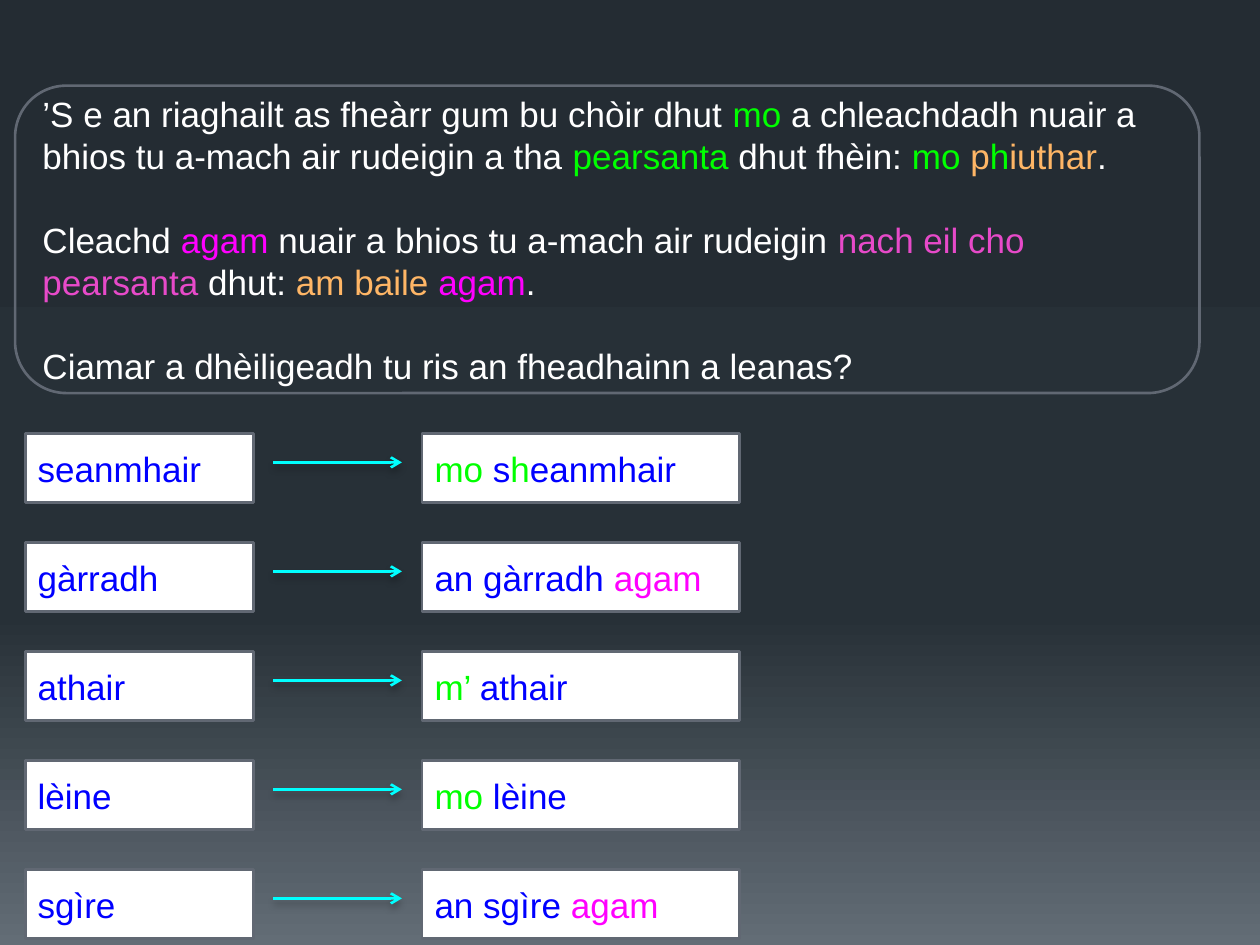
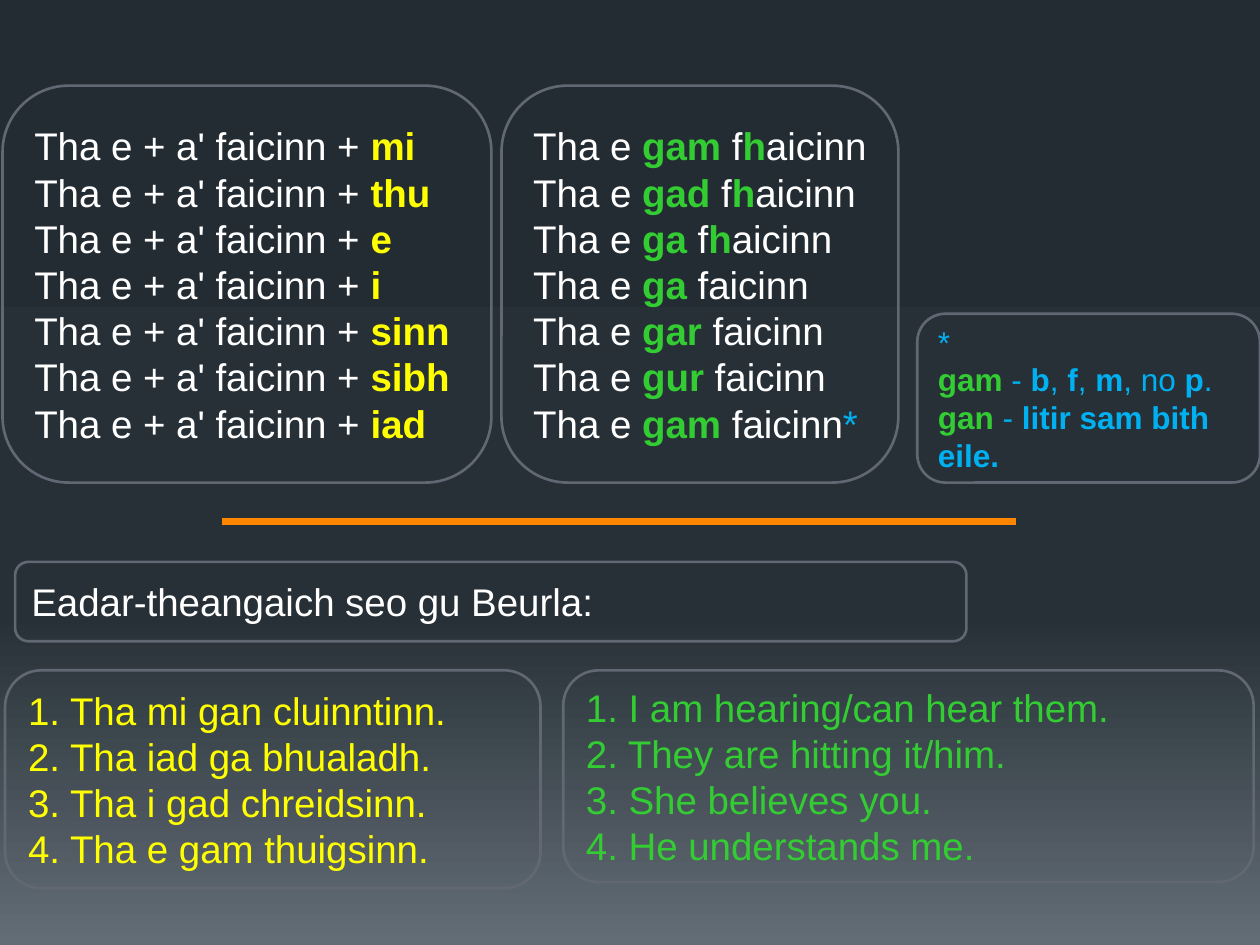
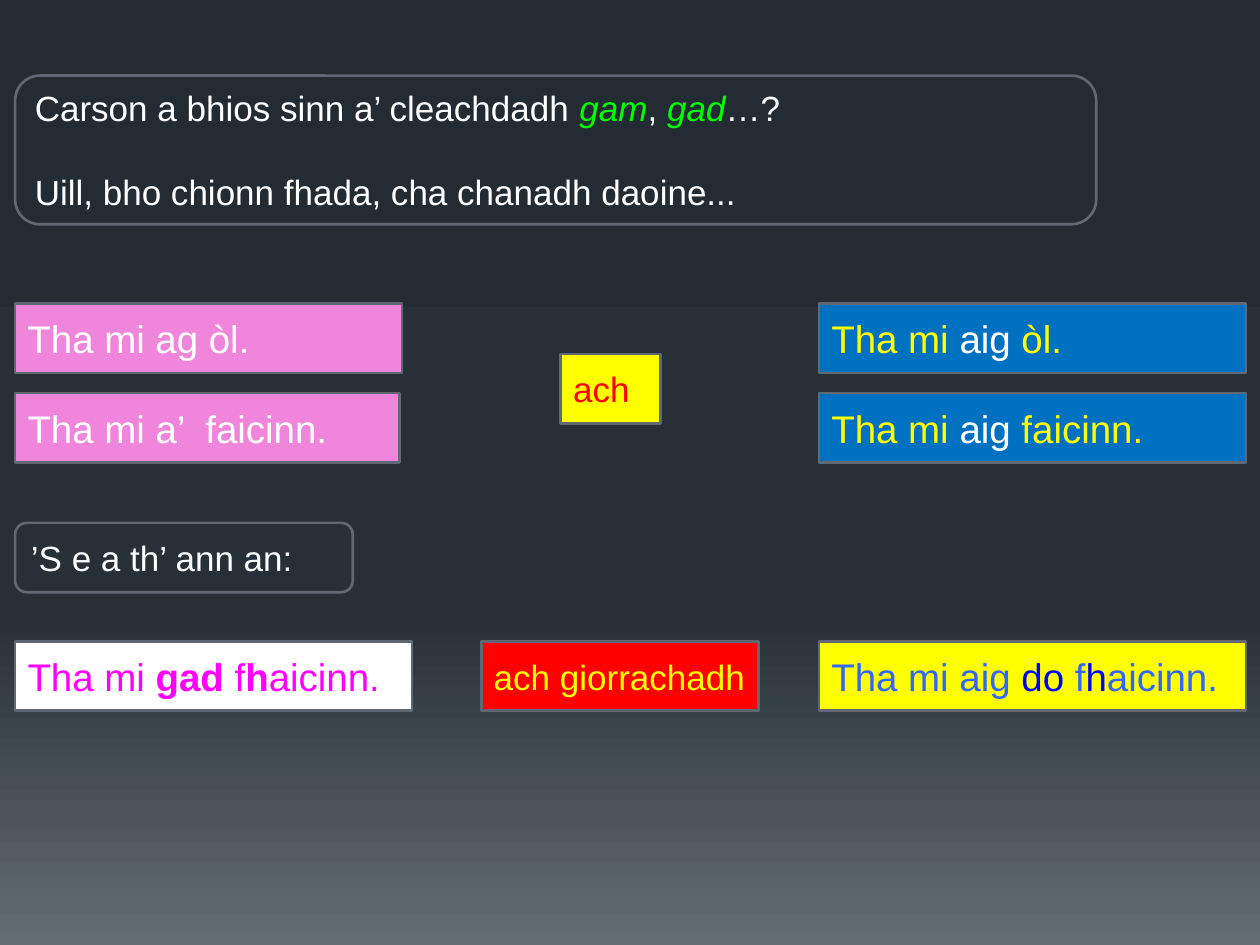
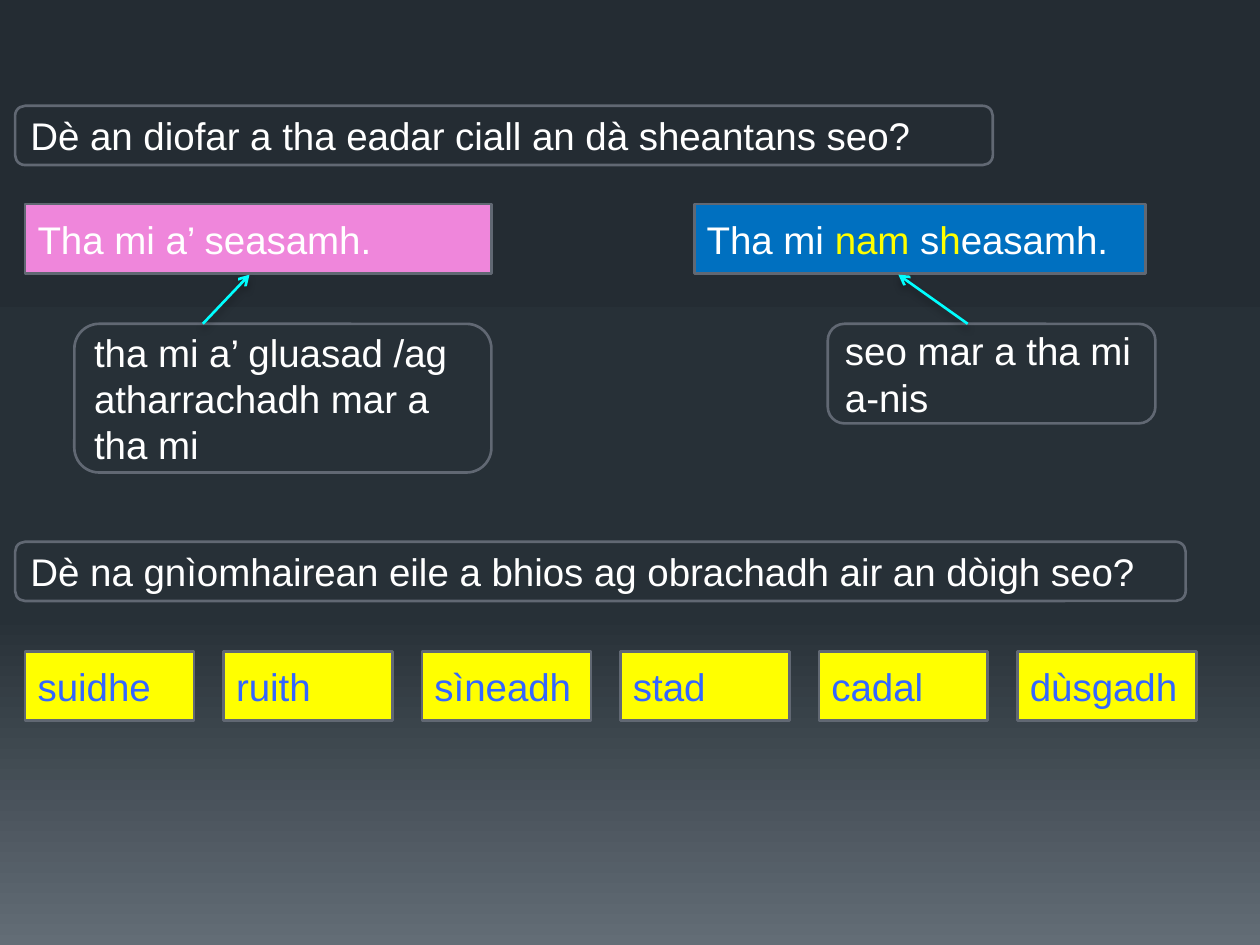
from lxml import etree
from pptx import Presentation
from pptx.dml.color import RGBColor
from pptx.enum.shapes import MSO_CONNECTOR as CONNECTOR, MSO_SHAPE as SHAPE
from pptx.enum.text import MSO_ANCHOR as ANCHOR, PP_ALIGN as ALIGN
from pptx.oxml.ns import qn
from pptx.util import Inches, Pt

rgb = RGBColor.from_string

# Shared palette and measures
WHITE, YELLOW, RED, BLUE = "FFFFFF", "FFFF00", "FF0000", "0000FF"
LIME, GREEN, SKY, CYAN = "00FF00", "33CC33", "00B0F0", "00FFFF"
MAGENTA, ROSE, PINK, PEACH = "FF00FF", "E74AC9", "EF86DB", "FFB666"
OCEAN, CORNFLOWER, ORANGE, OUTLINE = "0070C0", "3366FF", "FF8600", "616873"
BACKGROUND_STOPS = [(0, "242C33"), (65, "273037"), (100, "636D76")]
CARD_HEIGHT = 0.55
LINE_HEIGHT = 1.2


def add_box(slide, position, paragraphs, size=22, fill=None, gap=0):
    """Filled boxes are square cards, unfilled ones are rounded frames.

    Each paragraph is a list of (text, colour[, "b" or "i"]) runs.
    """
    kind = SHAPE.FLOWCHART_PROCESS if fill else SHAPE.ROUNDED_RECTANGLE
    shape = slide.shapes.add_shape(kind, *map(Inches, position))
    shape.shadow.inherit = False
    shape.line.color.rgb = rgb(OUTLINE)
    shape.line.width = Pt(1.5)
    if fill:
        shape.fill.solid()
        shape.fill.fore_color.rgb = rgb(fill)
    else:
        shape.fill.background()
    frame = shape.text_frame
    frame.word_wrap = True
    frame.vertical_anchor = ANCHOR.MIDDLE
    for index, runs in enumerate(paragraphs):
        paragraph = frame.add_paragraph() if index else frame.paragraphs[0]
        paragraph_format = {"alignment": ALIGN.LEFT,
                            "line_spacing": Pt(size * LINE_HEIGHT),
                            "space_before": Pt(gap if index else 0)}
        for name, value in paragraph_format.items():
            setattr(paragraph, name, value)
        for text, colour, *style in runs:
            run = paragraph.add_run()
            run.text = text
            run.font.color.rgb = rgb(colour)
            font_format = {"name": "Arial", "size": Pt(size),
                           "bold": "b" in style, "italic": "i" in style}
            for name, value in font_format.items():
                setattr(run.font, name, value)


def add_line(slide, start, end, colour=CYAN, width=1.5, arrow=True):
    """Draw a plain rule, or an arrow with a soft shadow below it."""
    line = slide.shapes.add_connector(CONNECTOR.STRAIGHT, *map(Inches, start + end))
    line.line.color.rgb = rgb(colour)
    line.line.width = Pt(width)
    properties = line._element.spPr
    effects = etree.SubElement(properties, qn("a:effectLst"))
    if arrow:
        etree.SubElement(properties.find(qn("a:ln")), qn("a:tailEnd"), type="arrow")
        shadow = etree.SubElement(effects, qn("a:outerShdw"), blurRad=str(Pt(4)),
                                  dist=str(Pt(3)), dir="5400000", rotWithShape="0")
        black = etree.SubElement(shadow, qn("a:srgbClr"), val="000000")
        etree.SubElement(black, qn("a:alpha"), val="28000")


presentation = Presentation()
presentation.slide_width, presentation.slide_height = Inches(10), Inches(7.5)

# Background gradient, shared through the master
master = presentation.slide_master
master.background.fill.gradient()
master.background.fill.gradient_angle = 270
stops = next(master.element.iter(qn("a:gsLst")))
for stop in list(stops):
    stops.remove(stop)
for percent, colour in BACKGROUND_STOPS:
    stop = etree.SubElement(stops, qn("a:gs"), pos=str(percent * 1000))
    etree.SubElement(stop, qn("a:srgbClr"), val=colour)

possessives, pronouns, history, states = [
    presentation.slides.add_slide(presentation.slide_layouts[6]) for _ in range(4)]

# Slide 1: the rule for "mo" and "agam"
add_box(possessives, (0.12, 0.68, 9.4, 2.44), [
    [("’S e an riaghailt as fheàrr gum bu chòir dhut ", WHITE), ("mo", LIME),
     (" a chleachdadh nuair a bhios tu a-mach air rudeigin a tha ", WHITE),
     ("pearsanta ", LIME), ("dhut fhèin: ", WHITE), ("mo ", LIME),
     ("p", PEACH), ("h", LIME), ("iuthar", PEACH), (".", WHITE)],
    [("Cleachd ", WHITE), ("agam ", MAGENTA),
     ("nuair a bhios tu a-mach air rudeigin ", WHITE),
     ("nach eil cho pearsanta ", ROSE), ("dhut: ", WHITE),
     ("am baile ", PEACH), ("agam", MAGENTA), (".", WHITE)],
    [("Ciamar a dhèiligeadh tu ris an fheadhainn a leanas?", WHITE)],
], size=20, gap=20 * LINE_HEIGHT)

# Slide 1: each noun with its possessive form
nouns = [
    ("seanmhair", [("mo ", LIME), ("s", BLUE), ("h", LIME), ("eanmhair", BLUE)]),
    ("gàrradh", [("an gàrradh ", BLUE), ("agam", MAGENTA)]),
    ("athair", [("m’ ", LIME), ("athair", BLUE)]),
    ("lèine", [("mo ", LIME), ("lèine", BLUE)]),
    ("sgìre", [("an sgìre ", BLUE), ("agam", MAGENTA)]),
]
for row, (noun, answer) in enumerate(nouns):
    top = 3.44 + row * 0.865
    add_box(possessives, (0.2, top, 1.81, CARD_HEIGHT), [[(noun, BLUE)]], 20, WHITE)
    add_box(possessives, (3.35, top, 2.52, CARD_HEIGHT), [answer], 20, WHITE)
    add_line(possessives, (2.17, top + 0.23), (3.19, top + 0.23))

# Slide 2: object pronouns and their merged forms
objects = ["mi", "thu", "e", "i", "sinn", "sibh", "iad"]
add_box(pronouns, (0.02, 0.68, 3.88, 3.15),
        [[("Tha e + a' faicinn + ", WHITE), (word, YELLOW, "b")] for word in objects])

lenited = [("f", WHITE), ("h", GREEN, "b"), ("aicinn", WHITE)]
unlenited = [("faicinn", WHITE)]
merged_forms = [("gam ", lenited), ("gad ", lenited), ("ga ", lenited),
                ("ga ", unlenited), ("gar ", unlenited), ("gur ", unlenited),
                ("gam ", unlenited + [("*", SKY)])]
add_box(pronouns, (3.98, 0.68, 3.15, 3.15),
        [[("Tha e ", WHITE), (form, GREEN, "b")] + verb for form, verb in merged_forms])

add_box(pronouns, (7.28, 2.49, 2.72, 1.34), [
    [("*", SKY)],
    [("gam ", GREEN, "b"), ("- ", SKY), ("b", SKY, "b"), (", ", SKY),
     ("f", SKY, "b"), (", ", SKY), ("m", SKY, "b"), (", no ", SKY),
     ("p", SKY, "b"), (".", SKY)],
    [("gan ", GREEN, "b"), ("- ", SKY), ("litir sam bith eile.", SKY, "b")],
], size=18)

# Slide 2: translation exercise
add_line(pronouns, (1.76, 4.14), (8.06, 4.14), ORANGE, 3.75, arrow=False)
add_box(pronouns, (0.12, 4.46, 7.55, 0.63),
        [[("Eadar-theangaich seo gu Beurla:", WHITE)]])
gaelic = ["Tha mi gan cluinntinn.", "Tha iad ga bhualadh.",
          "Tha i gad chreidsinn.", "Tha e gam thuigsinn."]
english = ["I am hearing/can hear them.", "They are hitting it/him.",
           "She believes you.", "He understands me."]
for position, sentences, colour in [((0.04, 5.32, 4.25, 1.73), gaelic, YELLOW),
                                    ((4.47, 5.32, 5.48, 1.68), english, GREEN)]:
    add_box(pronouns, position, [[(f"{number}. {sentence}", colour)]
                                 for number, sentence in enumerate(sentences, 1)])

# Slide 3: questions
add_box(history, (0.12, 0.6, 8.58, 1.18), [
    [("Carson a bhios sinn a’ cleachdadh ", WHITE), ("gam", LIME, "i"),
     (", ", WHITE), ("gad", LIME, "i"), ("…?", WHITE)],
    [("Uill, bho chionn fhada, cha chanadh daoine...", WHITE)],
], size=20, gap=20 * LINE_HEIGHT)
add_box(history, (0.12, 4.15, 2.68, CARD_HEIGHT), [[("’S e a th’ ann an:", WHITE)]], 20)

# Slide 3: modern forms, link words and older forms
history_cards = [
    (0.12, 2.41, 3.07, 22, PINK, [("Tha mi ag òl.", WHITE)]),
    (0.12, 3.12, 3.05, 22, PINK, [("Tha mi a’  faicinn.", WHITE)]),
    (6.5, 2.41, 3.39, 22, OCEAN,
     [("Tha mi ", YELLOW), ("aig ", WHITE), ("òl.", YELLOW)]),
    (6.5, 3.12, 3.39, 22, OCEAN,
     [("Tha mi ", YELLOW), ("aig ", WHITE), ("faicinn.", YELLOW)]),
    (4.45, 2.81, 0.79, 20, YELLOW, [("ach", RED)]),
    (0.12, 5.09, 3.15, 22, WHITE,
     [("Tha mi ", MAGENTA), ("gad ", MAGENTA, "b"), ("f", MAGENTA),
      ("h", MAGENTA, "b"), ("aicinn.", MAGENTA)]),
    (3.82, 5.09, 2.2, 20, RED, [("ach giorrachadh", YELLOW)]),
    (6.5, 5.09, 3.39, 22, YELLOW,
     [("Tha mi aig ", CORNFLOWER), ("do ", BLUE), ("f", CORNFLOWER),
      ("h", BLUE), ("aicinn.", CORNFLOWER)]),
]
for left, top, width, size, fill, runs in history_cards:
    add_box(history, (left, top, width, CARD_HEIGHT), [runs], size, fill)

# Slide 4: questions and explanations
state_frames = [
    ((0.12, 0.84, 7.76, 0.47), "Dè an diofar a tha eadar ciall an dà sheantans seo?"),
    ((0.59, 2.57, 3.31, 1.18), "tha mi a’ gluasad /ag atharrachadh mar a tha mi"),
    ((6.57, 2.57, 2.6, 0.79), "seo mar a tha mi a-nis"),
    ((0.12, 4.3, 9.29, 0.47),
     "Dè na gnìomhairean eile a bhios ag obrachadh air an dòigh seo?"),
]
for position, text in state_frames:
    add_box(states, position, [[(text, WHITE)]])

# Slide 4: the two sentences compared
add_box(states, (0.2, 1.62, 3.7, CARD_HEIGHT), [[("Tha mi a’ seasamh.", WHITE)]], fill=PINK)
add_box(states, (5.51, 1.62, 3.58, CARD_HEIGHT),
        [[("Tha mi ", WHITE), ("nam ", YELLOW), ("s", WHITE), ("h", YELLOW),
          ("easamh.", WHITE)]], fill=OCEAN)
add_line(states, (1.61, 2.57), (1.98, 2.18))
add_line(states, (7.68, 2.57), (7.13, 2.18))

# Slide 4: row of verbs, the last card slightly wider
verbs = ["suidhe", "ruith", "sìneadh", "stad", "cadal", "dùsgadh"]
for column, verb in enumerate(verbs):
    width = 1.42 if verb == verbs[-1] else 1.34
    add_box(states, (0.2 + column * 1.575, 5.17, width, CARD_HEIGHT),
            [[(verb, CORNFLOWER)]], fill=YELLOW)

presentation.save("out.pptx")
